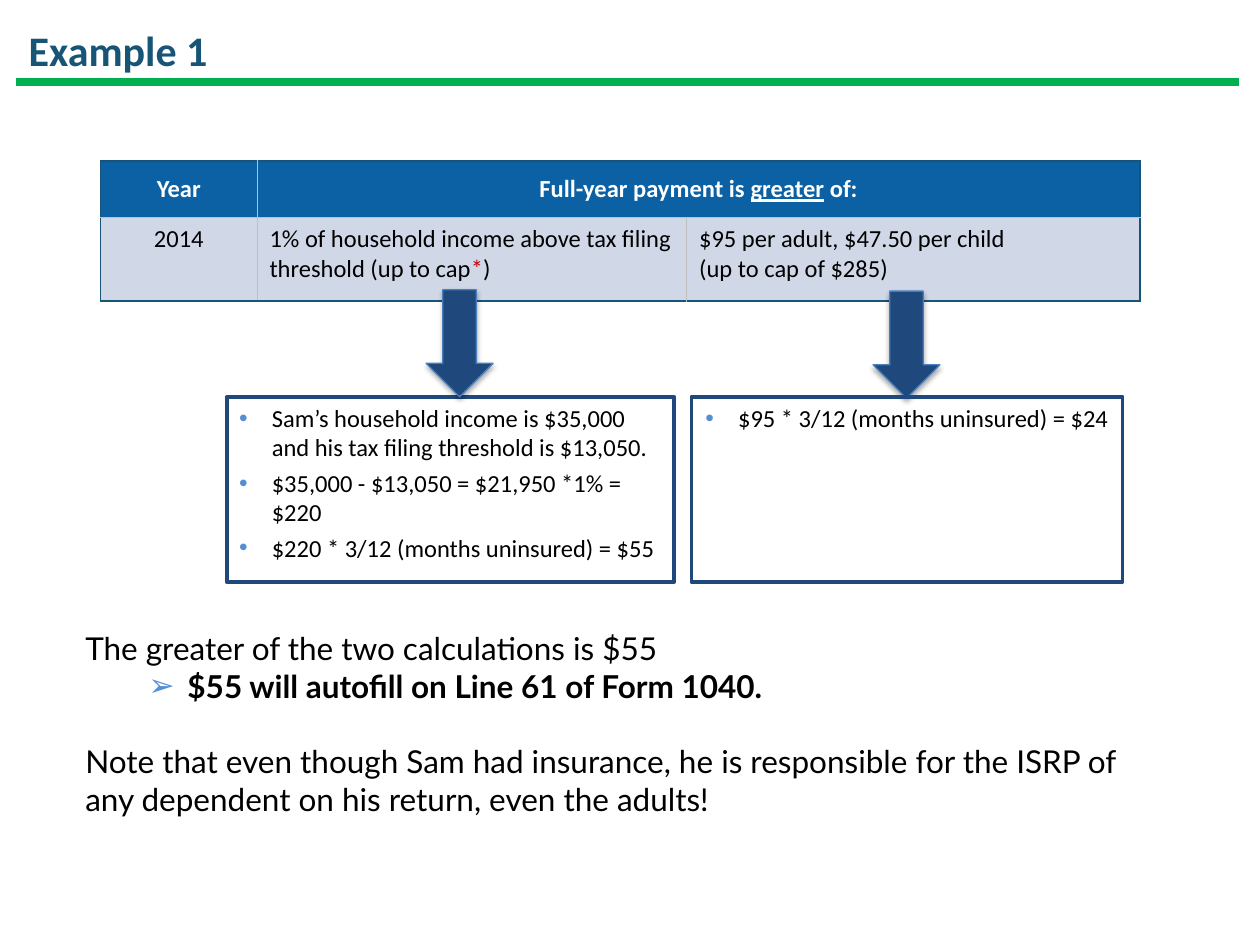
import pptx
import pptx.dml.color
import pptx.enum.shapes
import pptx.enum.text
import pptx.oxml.ns
import pptx.util
from dataclasses import dataclass
from lxml import etree

Cm, Pt = pptx.util.Cm, pptx.util.Pt
SHAPE = pptx.enum.shapes.MSO_SHAPE
ALIGN = pptx.enum.text.PP_ALIGN
ANCHOR = pptx.enum.text.MSO_ANCHOR
qn = pptx.oxml.ns.qn


@dataclass(frozen=True)
class Theme:
    heading: str = "175475"
    rule: str = "00B050"
    header: str = "0C61A4"
    band: str = "D0D8E8"
    grid: str = "BFBFBF"
    navy: str = "1F497D"
    arrow_edge: str = "4B7EBC"
    bullet: str = "558ED5"
    text: str = "000000"
    white: str = "FFFFFF"
    accent: str = "C00000"
    font: str = "Calibri"
    note_font: str = "Lato"
    title_size: float = 24
    note_size: float = 18
    size: float = 14


T = Theme()

TITLE = [{"runs": [("Example 1", {"bold": True, "color": T.heading})]}]
HEAD = {"bold": True, "color": T.white}
CENTER = {"alignment": ALIGN.CENTER}

TABLE = [
    [
        [{"runs": [("Year", HEAD)], "format": CENTER}],
        [{"runs": [("Full-year payment is ", HEAD), ("greater", {**HEAD, "underline": True}),
                   (" of:", HEAD)], "format": CENTER}],
        None,
    ],
    [
        [{"runs": [("2014", {})], "format": CENTER}],
        [{"runs": [("1% of household income above tax filing threshold (up to cap", {}),
                   ("*", {"color": T.accent}), (")", {})]}],
        [{"runs": [("$95 per adult, $47.50 per child", {})]},
         {"runs": [("(up to cap of $285)", {})]}],
    ],
]
COLUMNS = [3.15, 8.66, 9.14]
ROWS = [1.14, 1.68]

BULLET = ("•", 0.66, 0.66)
INCOME_STEPS = [
    "Sam’s household income is $35,000 and his tax filing threshold is $13,050.",
    "$35,000 - $13,050 = $21,950 *1% = $220",
    "$220 * 3/12 (months uninsured) = $55",
]
INCOME = [
    {"runs": [(step, {})], "bullet": BULLET, "format": {"space_before": Pt(3.4 if i else 0)}}
    for i, step in enumerate(INCOME_STEPS)
]
FLAT = [{"runs": [("$95 * 3/12 (months uninsured) = $24", {})],
         "bullet": BULLET, "format": CENTER}]

NOTES = [
    {"runs": [("The greater of the two calculations is $55", {})]},
    {"runs": [("$55 will autofill on Line 61 of Form 1040.", {"bold": True})],
     "bullet": ("➢", 2.06, 0.79), "format": {"level": 1}},
    {"runs": [("Note that even though Sam had insurance, he is responsible for the ISRP of "
               "any dependent on his return, even the adults!", {})],
     "format": {"space_before": Pt(21.6)}},
]

BOX_TOP, BOX_HEIGHT = 8.0, 3.73
ARROW_WIDTH, ARROW_HEIGHT = 1.35, 2.16


def rgb(color):
    return pptx.dml.color.RGBColor.from_string(color)


def apply(target, values):
    for name, value in values.items():
        setattr(target, name, value)


def child(parent, tag, **attrs):
    return etree.SubElement(parent, qn(tag), {k: str(v) for k, v in attrs.items()})


def fill_with(target, color):
    target.fill.solid()
    target.fill.fore_color.rgb = rgb(color)


def outline(s, color, width):
    s.line.color.rgb = rgb(color)
    s.line.width = Pt(width)


def add_bullet(p, mark, left, hang):
    pPr = p._p.get_or_add_pPr()
    pPr.set("marL", str(Cm(left)))
    pPr.set("indent", str(-Cm(hang)))
    child(child(pPr, "a:buClr"), "a:srgbClr", val=T.bullet)
    child(pPr, "a:buFont", typeface="Arial")
    child(pPr, "a:buChar", char=mark)


def write(tf, paragraphs, size=T.size, font=T.font, anchor=ANCHOR.TOP):
    apply(tf, {"word_wrap": True, "vertical_anchor": anchor})
    for i, item in enumerate(paragraphs):
        p = tf.add_paragraph() if i else tf.paragraphs[0]
        apply(p, {"alignment": ALIGN.LEFT, **item.get("format", {})})
        if "bullet" in item:
            add_bullet(p, *item["bullet"])
        for text, style in item["runs"]:
            r = p.add_run()
            r.text = text
            values = {"size": Pt(size), "name": font, "bold": False, **style}
            r.font.color.rgb = rgb(values.pop("color", T.text))
            apply(r.font, values)


def add_text(s, frame, paragraphs, **options):
    box = s.shapes.add_textbox(*map(Cm, frame))
    write(box.text_frame, paragraphs, **options)


def add_box(s, left, width, paragraphs):
    sp = s.shapes.add_shape(SHAPE.RECTANGLE, Cm(left), Cm(BOX_TOP), Cm(width), Cm(BOX_HEIGHT))
    sp.shadow.inherit = False
    sp.fill.background()
    outline(sp, T.navy, 2.25)
    write(sp.text_frame, paragraphs)


def add_arrow(s, left, top):
    sp = s.shapes.add_shape(SHAPE.DOWN_ARROW, Cm(left), Cm(top), Cm(ARROW_WIDTH), Cm(ARROW_HEIGHT))
    sp.shadow.inherit = False
    fill_with(sp, T.navy)
    outline(sp, T.arrow_edge, 0.75)
    effects = sp._element.spPr.find(qn("a:effectLst"))
    shadow = child(effects, "a:outerShdw", blurRad=Pt(3.1), dist=Pt(1.8), dir=5400000, rotWithShape=0)
    child(child(shadow, "a:srgbClr", val=T.text), "a:alpha", val=35000)


def add_rule(s):
    line = s.shapes.add_connector(pptx.enum.shapes.MSO_CONNECTOR.STRAIGHT,
                                  Cm(0.33), Cm(1.65), Cm(24.97), Cm(1.65))
    outline(line, T.rule, 4.75)
    child(line._element.spPr, "a:effectLst")


def add_borders(cell, outer):
    tcPr = cell._tc.get_or_add_tcPr()
    for side, is_outer in outer.items():
        color, width = (T.heading, 1) if is_outer else (T.grid, 0.5)
        ln = child(tcPr, "a:ln" + side, w=Pt(width))
        child(child(ln, "a:solidFill"), "a:srgbClr", val=color)


def add_payment_table(s):
    table = s.shapes.add_table(len(ROWS), len(COLUMNS), Cm(2.03), Cm(3.25),
                               Cm(sum(COLUMNS)), Cm(sum(ROWS))).table
    apply(table, {"first_row": False, "horz_banding": False})
    for column, width in zip(table.columns, COLUMNS):
        column.width = Cm(width)
    for row, height in zip(table.rows, ROWS):
        row.height = Cm(height)
    table.cell(0, 1).merge(table.cell(0, 2))
    for r, row in enumerate(TABLE):
        for c, content in enumerate(row):
            cell = table.cell(r, c)
            last = c + (cell.span_width if cell.is_merge_origin else 1) == len(COLUMNS)
            add_borders(cell, {"L": c == 0, "R": last, "T": r == 0, "B": r == len(ROWS) - 1})
            fill_with(cell, T.band if r else T.header)
            if content:
                write(cell.text_frame, content)
                cell.vertical_anchor = ANCHOR.TOP if r else ANCHOR.MIDDLE


def main():
    prs = pptx.Presentation()
    apply(prs, {"slide_width": Cm(25.4), "slide_height": Cm(19.05)})
    s = prs.slides.add_slide(prs.slide_layouts[6])
    add_rule(s)
    add_box(s, 4.57, 9.02, INCOME)
    add_payment_table(s)
    add_arrow(s, 8.59, 5.84)
    add_arrow(s, 17.6, 5.87)
    add_box(s, 13.94, 8.69, FLAT)
    add_text(s, (1.47, 12.55, 22.4, 4.11), NOTES, size=T.note_size, font=T.note_font)
    add_text(s, (0.33, 0.28, 22.86, 1.45), TITLE, size=T.title_size, anchor=ANCHOR.MIDDLE)
    prs.save("out.pptx")


if __name__ == "__main__":
    main()
